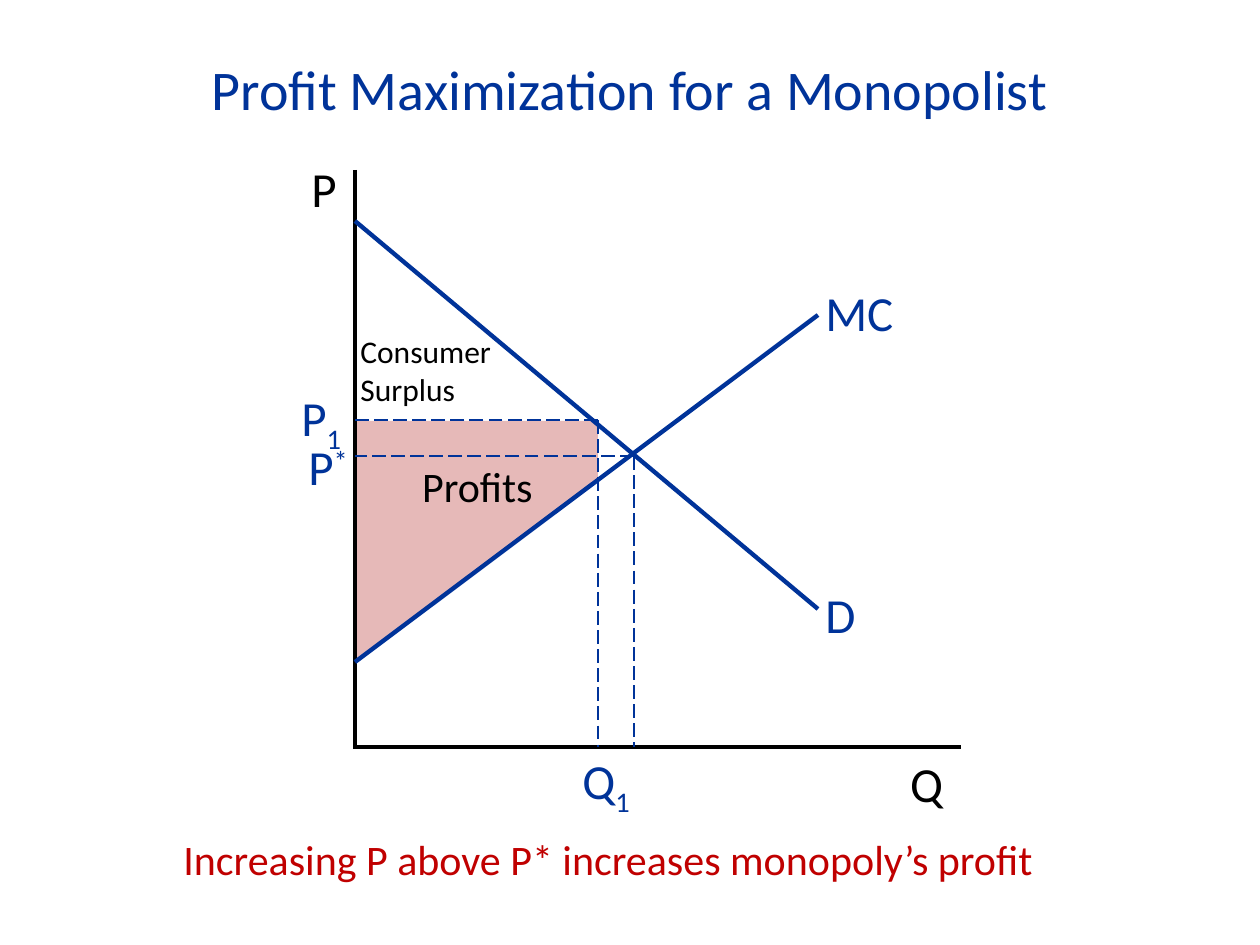
from collections import namedtuple

from lxml.etree import SubElement
from pptx import Presentation
from pptx.dml.color import RGBColor
from pptx.enum.dml import MSO_LINE
from pptx.enum.shapes import MSO_CONNECTOR
from pptx.enum.text import MSO_ANCHOR, MSO_AUTO_SIZE, PP_ALIGN
from pptx.oxml.ns import qn
from pptx.util import Emu, Pt

EMU_PER_PX = 914400 / 126
BLUE, BLACK, RED, PINK = "003399", "000000", "C00000", "E6B9B8"
SUBSCRIPT, SUPERSCRIPT = -25000, 30000

Box = namedtuple("Box", "left top width height")


def px(length):
    return Emu(round(length * EMU_PER_PX))


def color(hex_string):
    return RGBColor.from_string(hex_string)


def inside(box, left, top, width, height):
    """Turn a place relative to the box into a place on the page."""
    return Box(box.left + left, box.top + top, width, height)


def add_span(para, text, size, hex_color, baseline=None):
    span = para.add_run()
    span.text = text
    span.font.name = "Calibri"
    span.font.size = Pt(size)
    span.font.color.rgb = color(hex_color)
    if baseline:
        span._r.get_or_add_rPr().set("baseline", str(baseline))


def add_text(page, box, lines, size, hex_color, align=PP_ALIGN.LEFT,
             wrap=True, mark=None, spacing=None):
    """Add a text box; mark is an optional (text, baseline) after each line."""
    frame = page.shapes.add_textbox(*map(px, box)).text_frame
    frame.word_wrap = wrap
    frame.auto_size = MSO_AUTO_SIZE.SHAPE_TO_FIT_TEXT
    for index, line in enumerate(lines):
        para = frame.add_paragraph() if index else frame.paragraphs[0]
        para.alignment = align
        if spacing:
            para.line_spacing = spacing
        add_span(para, line, size, hex_color)
        if mark:
            add_span(para, mark[0], size, hex_color, mark[1])
    return frame


def add_line(page, box, start, end, hex_color, width=2.5, dashed=False):
    line = page.shapes.add_connector(
        MSO_CONNECTOR.STRAIGHT,
        px(box.left + start[0]), px(box.top + start[1]),
        px(box.left + end[0]), px(box.top + end[1]))
    line.line.color.rgb = color(hex_color)
    line.line.width = Pt(width)
    if dashed:
        line.line.dash_style = MSO_LINE.LONG_DASH
    SubElement(line._element.spPr, qn("a:effectLst"))


def add_profit_area(page, box, corners):
    points = [(box.left + x, box.top + y) for x, y in corners]
    builder = page.shapes.build_freeform(*points[0], scale=EMU_PER_PX)
    builder.add_line_segments(points[1:], close=True)
    area = builder.convert_to_shape()
    area.shadow.inherit = False
    area.fill.solid()
    area.fill.fore_color.rgb = color(PINK)
    area.line.fill.background()
    frame = area.text_frame
    frame.vertical_anchor = MSO_ANCHOR.MIDDLE
    frame.margin_bottom = px(114)
    para = frame.paragraphs[0]
    para.alignment = PP_ALIGN.CENTER
    add_span(para, "Profits", 24, BLACK)


def add_title(page, box):
    frame = add_text(page, box, ["Profit Maximization for a Monopolist"],
                     32, BLUE, PP_ALIGN.CENTER)
    frame.vertical_anchor = MSO_ANCHOR.MIDDLE


def add_diagram(page, box):
    axis_x, axis_y = 75, 587
    monopoly_x, monopoly_y = 318, 260
    market_x, market_y = 354, 296
    curve_end = 538

    add_profit_area(page, box, [
        (axis_x + 2, 498), (axis_x + 2, monopoly_y + 1),
        (monopoly_x, monopoly_y + 1), (monopoly_x, 319)])

    add_line(page, box, (axis_x, 10), (axis_x, axis_y + 2), BLACK)
    add_line(page, box, (axis_x, axis_y), (681, axis_y), BLACK)
    add_line(page, box, (axis_x, 61), (curve_end, 449), BLUE)
    add_line(page, box, (axis_x, 502), (curve_end, 155), BLUE)
    for x, y in [(market_x, market_y), (monopoly_x, monopoly_y)]:
        add_line(page, box, (x, y), (x, axis_y), BLUE, 1, dashed=True)
        add_line(page, box, (x, y), (axis_x, y), BLUE, 1, dashed=True)

    labels = [
        ("P", (19, 4, 57, 62), BLACK, None, 0.8),
        ("P", (9, 228, 68, 62), BLUE, ("1", SUBSCRIPT), 0.8),
        ("P", (16, 282, 68, 62), BLUE, ("*", SUPERSCRIPT), 0.8),
        ("Q", (290, 591, 81, 60), BLUE, ("1", SUBSCRIPT), 0.8),
        ("MC", (533, 116, 116, 72), BLUE, None, None),
        ("D", (533, 418, 116, 72), BLUE, None, None),
    ]
    for text, place, hex_color, mark, spacing in labels:
        add_text(page, inside(box, *place), [text], 28, hex_color,
                 mark=mark, spacing=spacing)
    quantity = add_text(page, inside(box, 586, 587, 111, 72), ["Q"], 28,
                        BLACK, PP_ALIGN.RIGHT)
    quantity.margin_right = px(34)
    add_text(page, inside(box, 68, 166, 158, 127), ["Consumer", "Surplus"],
             18, BLACK, wrap=False)


def add_conclusion(page, box):
    add_text(page, box, ["Increasing P above P* increases monopoly’s profit"],
             24, RED, wrap=False)


def main():
    deck = Presentation()
    deck.slide_width, deck.slide_height = px(1260), px(945)
    page = deck.slides.add_slide(deck.slide_layouts[6])
    add_title(page, Box(88, 48, 1084, 81))
    add_diagram(page, Box(280, 160, 700, 660))
    add_conclusion(page, Box(171, 827, 883, 63))
    deck.save("out.pptx")


if __name__ == "__main__":
    main()
